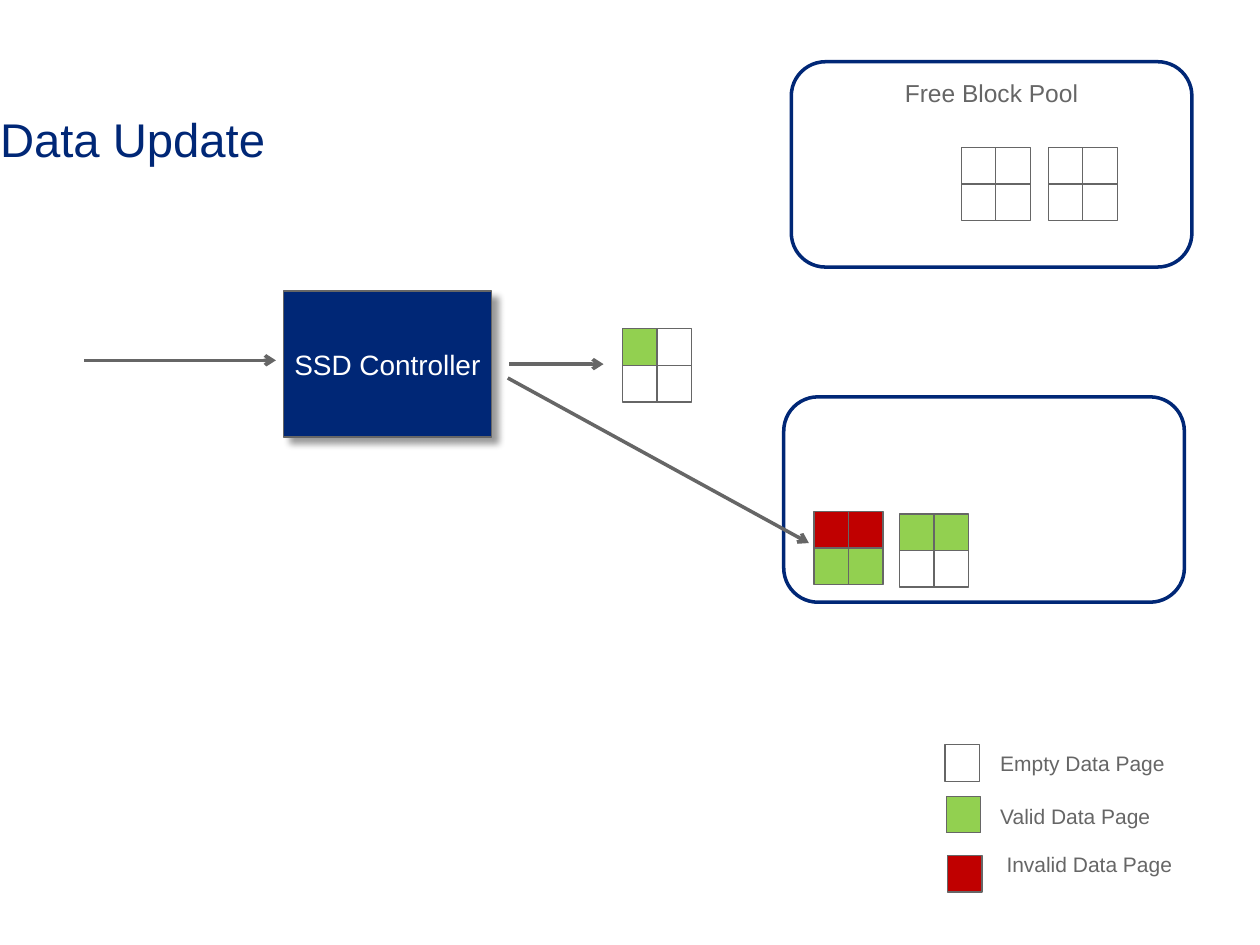
from lxml import etree
from pptx import Presentation
from pptx.dml.color import RGBColor
from pptx.enum.shapes import MSO_CONNECTOR as Link, MSO_SHAPE as Shape
from pptx.enum.text import MSO_ANCHOR as Anchor, PP_ALIGN as Align
from pptx.oxml import parse_xml
from pptx.oxml.ns import nsdecls, qn
from pptx.util import Inches, Pt

NAVY, GREY, WHITE = "002776", "666666", "FFFFFF"
EMPTY, VALID, INVALID = None, "92D050", "C00000"

deck = Presentation()
deck.slide_width, deck.slide_height = Inches(10), Inches(7.5)
slide = deck.slides.add_slide(deck.slide_layouts[6])
shapes = slide.shapes

# The slide is a grid of 100 columns by 75 rows
COL, ROW = deck.slide_width / 100, deck.slide_height / 75
PAGE_W, PAGE_H = 2.74, 2.9


def add_box(kind, col, row, cols, rows, fill=None, line=GREY, weight=0.75):
    box = shapes.add_shape(kind, int(col * COL), int(row * ROW),
                           int(cols * COL), int(rows * ROW))
    box.shadow.inherit = False
    if fill:
        box.fill.solid()
        box.fill.fore_color.rgb = RGBColor.from_string(fill)
    else:
        box.fill.background()
    box.line.color.rgb = RGBColor.from_string(line)
    box.line.width = Pt(weight)
    return box


def write(holder, text, size, color, align=Align.LEFT, **frame_format):
    frame = holder.text_frame
    for name, value in frame_format.items():
        setattr(frame, name, value)
    paragraph = frame.paragraphs[0]
    paragraph.alignment = align
    run = paragraph.add_run()
    run.text = text
    for name, value in {"name": "Arial", "size": Pt(size)}.items():
        setattr(run.font, name, value)
    run.font.color.rgb = RGBColor.from_string(color)


# Legend: page colour, marker column and row, label column and row
for label, fill, col, row, label_col, label_row in [
    ("Empty Data Page", EMPTY, 75, 59.1, 78.4, 59.1),
    ("Valid Data Page", VALID, 75.1, 63.2, 78.4, 63.3),
    ("Invalid Data Page", INVALID, 75.2, 67.9, 78.9, 67.1),
]:
    add_box(Shape.RECTANGLE, col, row, PAGE_W, PAGE_H, fill)
    label_box = shapes.add_textbox(int(label_col * COL), int(label_row * ROW),
                                   int(20 * COL), int(3 * ROW))
    write(label_box, label, 12, GREY, word_wrap=True)

# Pools of free and used blocks
free_pool = add_box(Shape.ROUNDED_RECTANGLE, 62.8, 4.9, 31.8, 16.3, None, NAVY, 2)
write(free_pool, "Free Block Pool", 14, GREY, Align.CENTER,
      word_wrap=False, vertical_anchor=Anchor.TOP)
add_box(Shape.ROUNDED_RECTANGLE, 62.2, 31.5, 31.8, 16.3, None, NAVY, 2)

# Controller with its drop shadow
controller = add_box(Shape.RECTANGLE, 22.5, 23.1, 16.5, 11.6, NAVY)
write(controller, "SSD Controller", 16, WHITE, Align.CENTER,
      word_wrap=False, vertical_anchor=Anchor.MIDDLE)
effects = controller._element.spPr.find(qn("a:effectLst"))
effects.append(parse_xml(
    f'<a:outerShdw {nsdecls("a")} blurRad="{Pt(4)}" dist="{Pt(5)}" dir="2700000" '
    'algn="tl" rotWithShape="0"><a:srgbClr val="000000"><a:alpha val="40000"/>'
    '</a:srgbClr></a:outerShdw>'))

# Blocks of two by two pages, listed row by row
for col, row, pages in [
    (76.3, 11.7, [EMPTY] * 4),
    (83.2, 11.7, [EMPTY] * 4),
    (49.4, 26.1, [VALID, EMPTY, EMPTY, EMPTY]),
    (64.6, 40.6, [INVALID, INVALID, VALID, VALID]),
    (71.4, 40.8, [VALID, VALID, EMPTY, EMPTY]),
]:
    for index, fill in enumerate(pages):
        down, across = divmod(index, 2)
        add_box(Shape.RECTANGLE, col + across * PAGE_W, row + down * PAGE_H,
                PAGE_W, PAGE_H, fill)

# Data flow arrows
for from_col, from_row, to_col, to_row in [
    (6.7, 28.6, 21.9, 28.6),
    (40.4, 28.9, 47.9, 28.9),
    (40.3, 30, 64.2, 43.1),
]:
    arrow = shapes.add_connector(Link.STRAIGHT, int(from_col * COL), int(from_row * ROW),
                                 int(to_col * COL), int(to_row * ROW))
    arrow.line.color.rgb = RGBColor.from_string(GREY)
    arrow.line.width = Pt(2)
    etree.SubElement(arrow.line._get_or_add_ln(), qn("a:tailEnd"), type="arrow")
    etree.SubElement(arrow._element.spPr, qn("a:effectLst"))

# Title
title = shapes.add_textbox(0, int(8 * ROW), int(28.1 * COL), int(6 * ROW))
write(title, "Data Update", 27, NAVY, word_wrap=True, margin_left=0,
      vertical_anchor=Anchor.MIDDLE)

deck.save("out.pptx")
